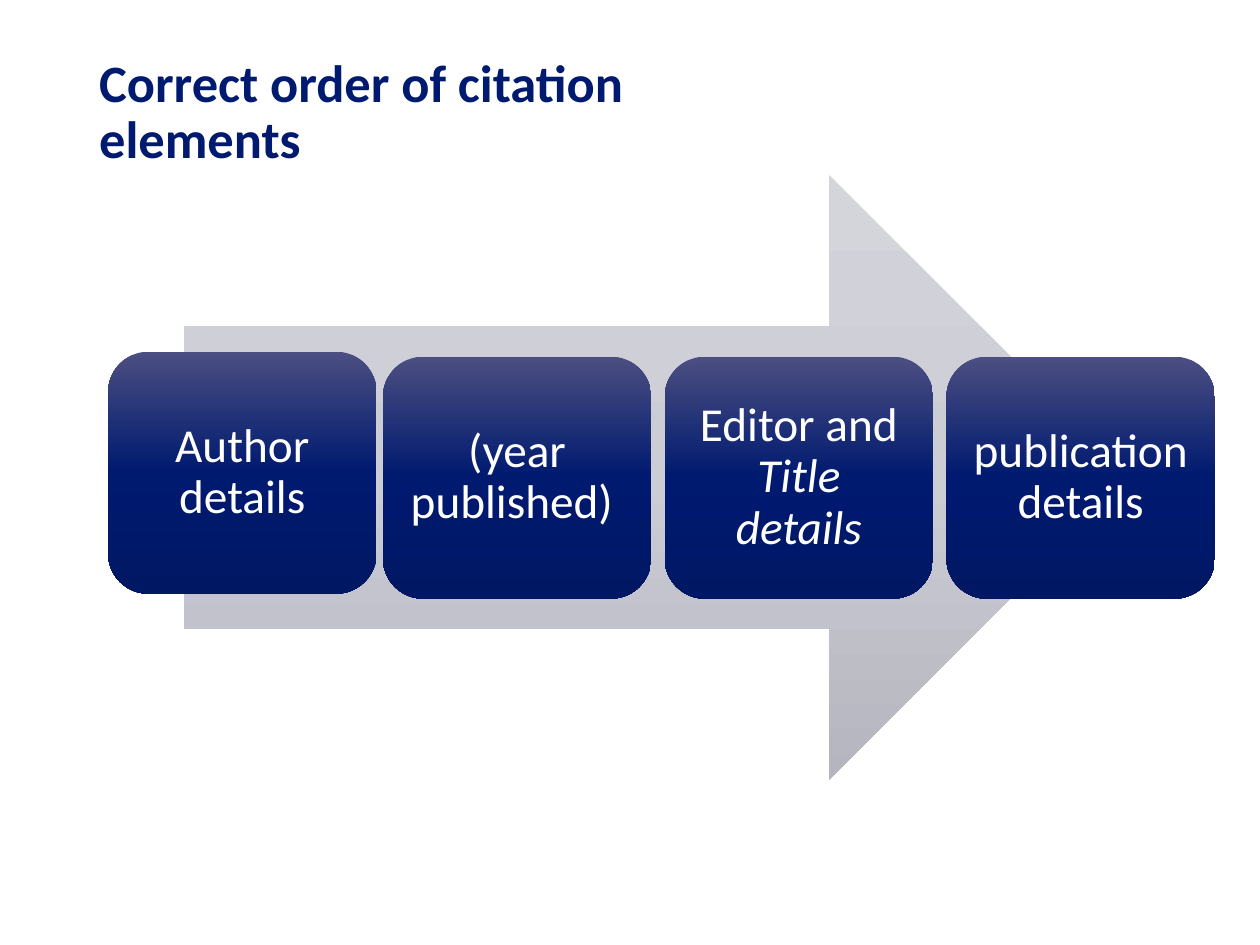
from copy import deepcopy

from pptx import Presentation
from pptx.dml.color import RGBColor
from pptx.enum import shapes, text
from pptx.oxml.ns import qn
from pptx.util import Cm, Pt

NAVY = RGBColor(0x00, 0x1A, 0x70)
WHITE = RGBColor(0xFF, 0xFF, 0xFF)
ARROW_STOPS = (RGBColor(0xD4, 0xD4, 0xDB), RGBColor(0xCC, 0xCC, 0xD5),
               RGBColor(0xB4, 0xB5, 0xBE))
CARD_STOPS = (RGBColor(0x4B, 0x4E, 0x81), NAVY, RGBColor(0x00, 0x17, 0x64))

CARD_W, CARD_H = 5.41, 4.88
CARD_TOP = 7.19
CARD_LEFT, CARD_PITCH = 7.72, 5.68  # second card, and step to the next ones
CARD_INSET = 0.28

AUTHOR = [("Author details", {})]
FOLLOWING = [
    [("(year published) ", {})],
    [("Editor and ", {}), ("Title details", {"italic": True})],
    [("publication details", {})],
]


def apply(obj, values):
    for name, value in values.items():
        setattr(obj, name, value)


def write(tf, runs, align, size, color, **font):
    """Fill a text frame with one paragraph of formatted runs."""
    p = tf.paragraphs[0]
    apply(p, {"alignment": align, "line_spacing": 0.9})
    for words, extra in runs:
        r = p.add_run()
        r.text = words
        apply(r.font, {"name": "Calibri", "size": Pt(size), **font, **extra})
        r.font.color.rgb = color


def add_gradient_shape(s, kind, left, top, width, height, stops):
    """Add a borderless shape with a three-stop gradient running downwards."""
    sp = s.shapes.add_shape(kind, Cm(left), Cm(top), Cm(width), Cm(height))
    sp.shadow.inherit = False
    sp.line.fill.background()
    sp.fill.gradient()
    sp.fill.gradient_angle = 270
    first = next(sp._element.spPr.iter(qn("a:gs")))
    first.addnext(deepcopy(first))
    for i, (stop, color) in enumerate(zip(sp.fill.gradient_stops, stops)):
        stop.position = i / 2
        stop.color.rgb = color
    return sp


def add_title(s, words):
    tf = s.shapes.add_textbox(Cm(1.75), Cm(1.02), Cm(11.66), Cm(3.68)).text_frame
    tf.word_wrap = True
    write(tf, [(words, {})], text.PP_ALIGN.LEFT, 30, NAVY, bold=True)


def add_card(s, left, top, runs):
    sp = add_gradient_shape(s, shapes.MSO_SHAPE.ROUNDED_RECTANGLE,
                            left, top, CARD_W, CARD_H, CARD_STOPS)
    tf = sp.text_frame
    apply(tf, {"word_wrap": True, "vertical_anchor": text.MSO_ANCHOR.MIDDLE})
    apply(tf, {f"margin_{side}": Cm(CARD_INSET)
               for side in ("left", "top", "right", "bottom")})
    write(tf, runs, text.PP_ALIGN.CENTER, 27, WHITE)


def main():
    prs = Presentation()
    prs.slide_width, prs.slide_height = Cm(25.4), Cm(19.05)
    s = prs.slides.add_slide(prs.slide_layouts[6])

    # Title
    add_title(s, "Correct order of citation elements")

    # Arrow behind the cards
    add_gradient_shape(s, shapes.MSO_SHAPE.RIGHT_ARROW,
                       3.71, 3.53, 19.1, 12.19, ARROW_STOPS)

    # Cards: the first sits slightly higher and closer to its neighbour
    add_card(s, 2.18, 7.09, AUTHOR)
    for i, runs in enumerate(FOLLOWING):
        add_card(s, CARD_LEFT + i * CARD_PITCH, CARD_TOP, runs)

    prs.save("out.pptx")


if __name__ == "__main__":
    main()
